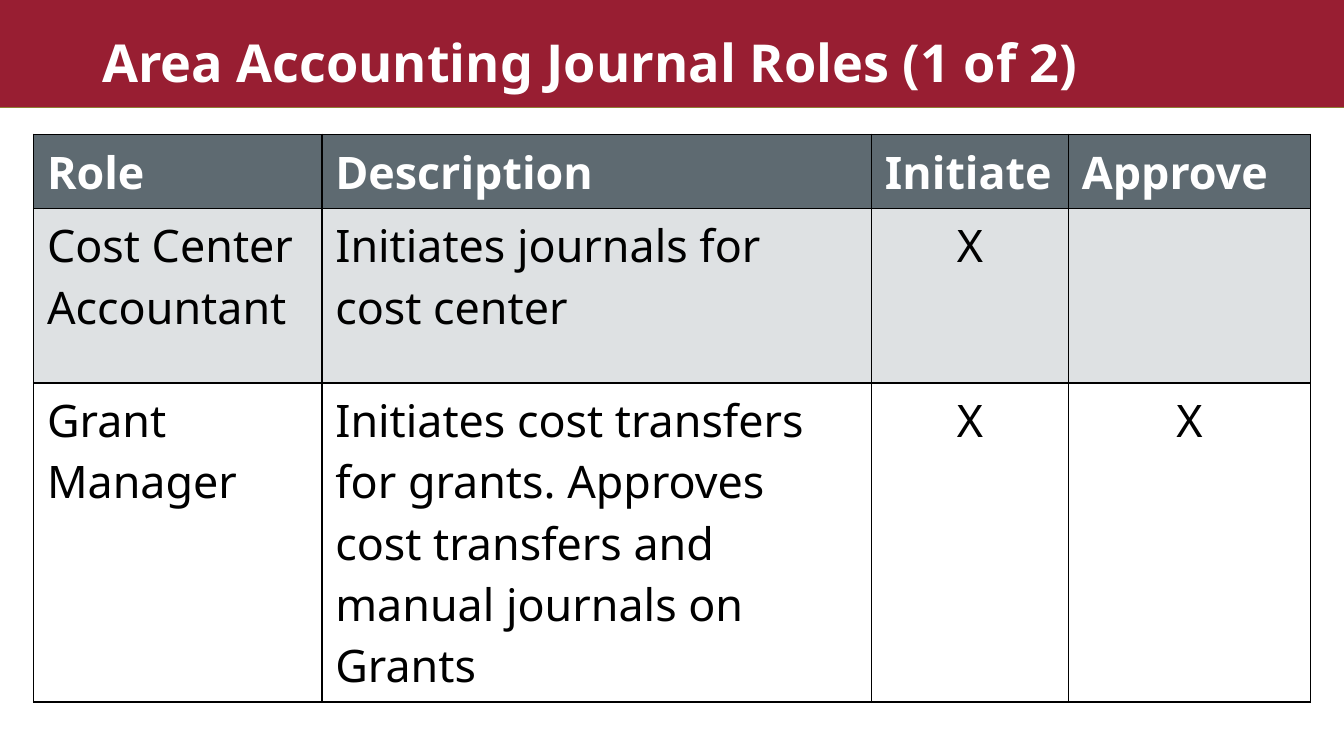
from lxml.etree import SubElement as Sub
from pptx import Presentation
from pptx.dml.color import RGBColor
from pptx.enum.shapes import MSO_CONNECTOR as Conn, MSO_SHAPE as Shape
from pptx.enum.text import MSO_ANCHOR as Anchor, MSO_AUTO_SIZE as Fit, PP_ALIGN as Align
from pptx.oxml.ns import qn
from pptx.util import Pt

FONT = "Noto Sans"
ROWS = [
    ["Role", "Description", "Initiate", "Approve"],
    ["Cost Center Accountant", "Initiates journals for cost center", "X", ""],
    ["Grant Manager", "Initiates cost transfers for grants. Approves cost "
     "transfers and manual journals on Grants", "X", "X"],
]
FILLS = ["5E6A71", "DEE1E3", "FFFFFF"]
WIDTHS = [429, 818, 293, 360]
HEIGHTS = [110, 260, 475]


def px(n):
    return n * 4572


def color(code):
    return RGBColor.from_string(code)


def paint(obj, code):
    obj.fill.solid()
    obj.fill.fore_color.rgb = color(code)


def style(para, size, code, bold):
    for run in para.runs:
        font = run.font
        font.name, font.size, font.bold = FONT, Pt(size), bold
        font.color.rgb = color(code)


def border(cell):
    props = cell._tc.get_or_add_tcPr()
    for i, side in enumerate(("lnL", "lnR", "lnT", "lnB")):
        line = props.makeelement(qn("a:" + side), {"w": str(Pt(1))})
        fill = Sub(line, qn("a:solidFill"))
        Sub(fill, qn("a:srgbClr"), val="000000")
        props.insert(i, line)


def header(slide, x, y, w, h):
    band = slide.shapes.add_shape(Shape.RECTANGLE, px(x), px(y), px(w), px(h))
    band.shadow.inherit = False
    paint(band, "981E32")
    band.line.fill.background()
    rule = slide.shapes.add_connector(
        Conn.STRAIGHT, px(x), px(y + h), px(x + w), px(y + h))
    rule.line.color.rgb = color("8F7E35")
    rule.line.width = Pt(1)
    Sub(rule._element.spPr, qn("a:effectLst"))

    title = slide.shapes.title
    slide.shapes._spTree.append(title._element)
    title.left, title.top = px(x + 52), px(y + 43)
    title.width, title.height = px(w - 66), px(h - 54)
    frame = title.text_frame
    frame.text = "Area Accounting Journal Roles (1 of 2)"
    frame.word_wrap = True
    frame.auto_size = Fit.SHAPE_TO_FIT_TEXT
    frame.vertical_anchor = Anchor.BOTTOM
    frame.margin_left = frame.margin_right = px(100)
    frame.margin_top = frame.margin_bottom = px(10)
    para = frame.paragraphs[0]
    para.alignment = Align.LEFT
    para.line_spacing = 0.9
    style(para, 28, "FFFFFF", True)


def roles(slide, x, y, w, h):
    table = slide.shapes.add_table(
        len(ROWS), len(WIDTHS), px(x), px(y), px(w), px(h)).table
    for col, width in zip(table.columns, WIDTHS):
        col.width = px(width)
    for r, texts in enumerate(ROWS):
        table.rows[r].height = px(HEIGHTS[r])
        head = r == 0
        for c, text in enumerate(texts):
            cell = table.cell(r, c)
            paint(cell, FILLS[r])
            border(cell)
            cell.text_frame.text = text
            para = cell.text_frame.paragraphs[0]
            if c > 1 and not head:
                para.alignment = Align.CENTER
            style(para, 24, "FFFFFF" if head else "000000", head)


def main():
    deck = Presentation()
    deck.slide_width, deck.slide_height = px(2000), px(1125)
    slide = deck.slides.add_slide(deck.slide_layouts[5])
    header(slide, 0, 0, 2000, 160)
    roles(slide, 50, 200, sum(WIDTHS), sum(HEIGHTS))
    deck.save("out.pptx")


if __name__ == "__main__":
    main()
